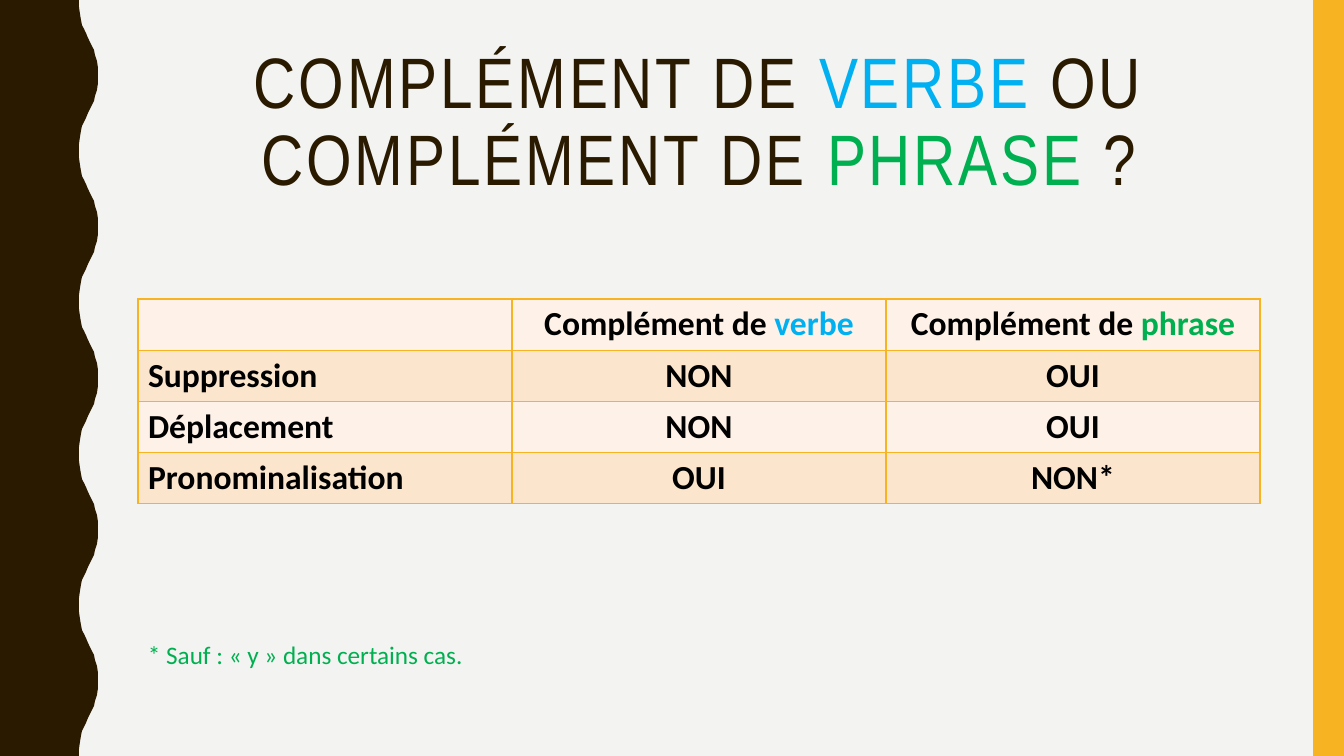
"""Build the slide comparing the French verb and sentence complements."""
from lxml.etree import SubElement
from pptx import Presentation
from pptx.dml.color import RGBColor
from pptx.enum.shapes import MSO_SHAPE as Shape
from pptx.enum.text import MSO_ANCHOR as Anchor, MSO_AUTO_SIZE as AutoSize, PP_ALIGN as Align
from pptx.oxml.ns import qn
from pptx.util import Pt

COLORS = {
    "paper": "F3F3F2", "brown": "2A1A00", "gold": "F8B323", "verb": "00B0F0",
    "phrase": "00B050", "ink": "000000", "light": "FEF2E8", "peach": "FCE5CD",
}
TITLE = [
    ("COMPLÉMENT DE ", "brown"), ("VERBE", "verb"), (" OU COMPLÉMENT DE ", "brown"),
    ("PHRASE", "phrase"), (" ?", "brown"),
]
TESTS = [
    [[],
     [("Complément de ", "ink"), ("verbe", "verb")],
     [("Complément de ", "ink"), ("phrase", "phrase")]],
    [[("Suppression", "ink")], [("NON", "ink")], [("OUI", "ink")]],
    [[("Déplacement", "ink")], [("NON", "ink")], [("OUI", "ink")]],
    [[("Pronominalisation", "ink")], [("OUI", "ink")], [("NON*", "ink")]],
]
NOTE = [("* Sauf : « y » dans certains cas.", "phrase")]

TITLE_FONT = {"name": "Arial Narrow", "size": Pt(51), "bold": False}
TEST_FONT = {"name": "Calibri", "size": Pt(24), "bold": True}
NOTE_FONT = {"name": "Calibri", "size": Pt(18), "bold": False}
PLAIN_TABLE = {"first_row": False, "horz_banding": False}

PX = 914400 / 100.8
WIDTH, HEIGHT = 1344, 756
LEFT, CONTENT_WIDTH = 138, 1122
ROW_HEIGHT = 41
WAVES = 5
WAVE_RISE = [
    (79, 0), (79, 7), (80, 14), (81, 20), (82, 25), (84, 29), (86, 33), (88, 38),
    (90, 42), (92, 46), (94, 50), (95, 55), (97, 61), (98, 68), (98, 76),
]


def px(*lengths):
    return [round(length * PX) for length in lengths]


def rgb(color):
    return RGBColor.from_string(COLORS[color])


def apply(target, values):
    for name, value in values.items():
        setattr(target, name, value)


def write(paragraph, pieces, font, align=Align.LEFT):
    paragraph.alignment = align
    for words, color in pieces:
        run = paragraph.add_run()
        run.text = words
        apply(run.font, font)
        run.font.color.rgb = rgb(color)


def paint(shape, color):
    shape.shadow.inherit = False
    shape.fill.solid()
    shape.fill.fore_color.rgb = rgb(color)
    shape.line.fill.background()


def add_borders(cell):
    properties = cell._tc.get_or_add_tcPr()
    for side in ("a:lnL", "a:lnR", "a:lnT", "a:lnB"):
        border = SubElement(properties, qn(side), w=str(Pt(1)))
        fill = SubElement(border, qn("a:solidFill"))
        SubElement(fill, qn("a:srgbClr"), val=COLORS["gold"])


def add_edges(shapes):
    period = HEIGHT / WAVES
    wave = WAVE_RISE + [(x, period - y) for x, y in reversed(WAVE_RISE)]
    edge = [(x, y + period * turn) for turn in range(WAVES) for x, y in wave]
    outline = shapes.build_freeform(0, 0, scale=PX)
    outline.add_line_segments(edge + [(0, HEIGHT)], close=True)
    paint(outline.convert_to_shape(), "brown")
    paint(shapes.add_shape(Shape.RECTANGLE, *px(1313, 0, WIDTH - 1313, HEIGHT)), "gold")


def add_title(title):
    title.left, title.top, title.width, title.height = px(LEFT, 42, CONTENT_WIDTH, 164)
    apply(title.text_frame, {
        "word_wrap": True, "auto_size": AutoSize.NONE, "vertical_anchor": Anchor.MIDDLE,
    })
    heading = title.text_frame.paragraphs[0]
    heading.line_spacing = 0.9
    write(heading, TITLE, TITLE_FONT, Align.CENTER)
    for run in heading.runs:
        run.font._element.set("spc", "200")


def add_tests(shapes):
    frame = px(LEFT, 299, CONTENT_WIDTH, ROW_HEIGHT * len(TESTS))
    table = shapes.add_table(len(TESTS), len(TESTS[0]), *frame).table
    apply(table, PLAIN_TABLE)
    for row, answers in enumerate(TESTS):
        for column, pieces in enumerate(answers):
            cell = table.cell(row, column)
            align = Align.CENTER if column else Align.LEFT
            write(cell.text_frame.paragraphs[0], pieces, TEST_FONT, align)
            add_borders(cell)
            cell.fill.solid()
            cell.fill.fore_color.rgb = rgb("peach" if row % 2 else "light")


def add_note(shapes):
    note = shapes.add_textbox(*px(LEFT, 634, CONTENT_WIDTH, 41)).text_frame
    apply(note, {"word_wrap": True, "auto_size": AutoSize.SHAPE_TO_FIT_TEXT})
    write(note.paragraphs[0], NOTE, NOTE_FONT)


def main():
    deck = Presentation()
    deck.slide_width, deck.slide_height = px(WIDTH, HEIGHT)
    slide = deck.slides.add_slide(deck.slide_layouts[5])
    slide.background.fill.solid()
    slide.background.fill.fore_color.rgb = rgb("paper")
    add_edges(slide.shapes)
    add_title(slide.shapes.title)
    add_tests(slide.shapes)
    add_note(slide.shapes)
    deck.save("out.pptx")


if __name__ == "__main__":
    main()
